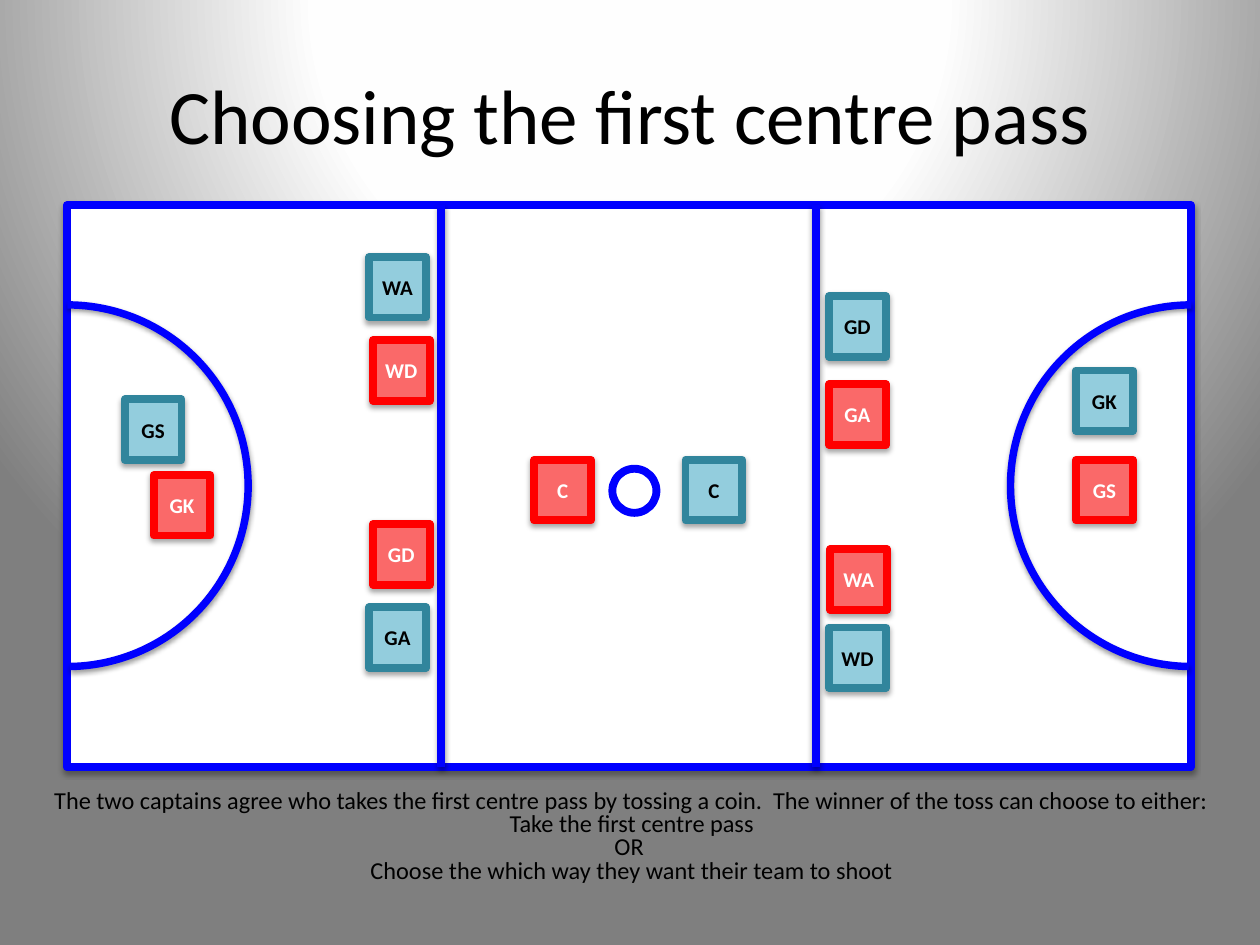
import pptx
import pptx.dml.color
import pptx.enum.shapes
import pptx.enum.text
import pptx.oxml
import pptx.oxml.ns
import pptx.util

SHAPE = pptx.enum.shapes.MSO_SHAPE
COLOURS = {
    "text": "000000", "court": "FFFFFF", "line": "0000FF",
    "centre": "FEFEFE", "edge": "7F7F7F",
    "blue": "93CDDD", "blue border": "31859C", "blue text": "000000",
    "red": "FA6969", "red border": "FF0000", "red text": "FFFFFF",
}
COLUMNS, ROWS = 100, 75
COURT_LEFT, COURT_TOP, COURT_WIDTH, COURT_HEIGHT = 5.3, 16.3, 89.2, 44.6
PLAYERS = [
    ("GA", "blue", 29.3, 48.2), ("GS", "blue", 9.9, 31.7),
    ("C", "blue", 54.4, 36.5), ("GD", "blue", 65.8, 23.5),
    ("GK", "blue", 85.4, 29.4), ("GD", "red", 29.6, 41.6),
    ("GK", "red", 12.2, 37.7), ("C", "red", 42.4, 36.5),
    ("GA", "red", 65.8, 30.5), ("GS", "red", 85.4, 36.5),
    ("WA", "blue", 29.3, 20.4), ("WD", "blue", 65.8, 49.8),
    ("WA", "red", 65.9, 43.6), ("WD", "red", 29.6, 27),
]
RULES = [
    "The two captains agree who takes the first centre pass by tossing a coin.  "
    "The winner of the toss can choose to either:",
    "Take the first centre pass",
    "OR ",
    "Choose the which way they want their team to shoot",
]


class CourtSlide:
    """Draws netball court elements on one slide, measured in grid columns and rows."""

    font = "Calibri"

    def __init__(self, presentation):
        self.column = presentation.slide_width / COLUMNS
        self.row = presentation.slide_height / ROWS
        self.slide = presentation.slides.add_slide(presentation.slide_layouts[6])
        self.court = self.slide.shapes.add_group_shape()

    def colour(self, name):
        return pptx.dml.color.RGBColor.from_string(COLOURS[name])

    def place(self, left, top, width, height):
        return (round(left * self.column), round(top * self.row),
                round(width * self.column), round(height * self.row))

    def background(self, stops):
        self.slide.background.fill.solid()
        properties = self.slide.background.fill._xPr
        stop_xml = "".join(
            f'<a:gs pos="{share * 1000}"><a:srgbClr val="{COLOURS[name]}"/></a:gs>'
            for share, name in stops)
        gradient = pptx.oxml.parse_xml(
            f'<a:gradFill {pptx.oxml.ns.nsdecls("a")} rotWithShape="1">'
            f'<a:gsLst>{stop_xml}</a:gsLst><a:path path="circle">'
            '<a:fillToRect l="50000" t="-80000" r="50000" b="180000"/>'
            '</a:path></a:gradFill>')
        properties.replace(properties[0], gradient)

    def shadow(self, shape, opacity=38, distance=1.6):
        shape._element.spPr.append(pptx.oxml.parse_xml(
            f'<a:effectLst {pptx.oxml.ns.nsdecls("a")}>'
            f'<a:outerShdw blurRad="{pptx.util.Pt(3.1)}" dist="{pptx.util.Pt(distance)}" '
            'dir="5400000" rotWithShape="0"><a:srgbClr val="000000">'
            f'<a:alpha val="{opacity * 1000}"/></a:srgbClr></a:outerShdw></a:effectLst>'))

    def outline(self, shape, name="line", width=4.5):
        shape.line.color.rgb = self.colour(name)
        shape.line.width = pptx.util.Pt(width)

    def block(self, shapes, kind, area, fill, border):
        shape = shapes.add_shape(kind, *self.place(*area))
        shape.fill.solid()
        shape.fill.fore_color.rgb = self.colour(fill)
        self.outline(shape, border)
        return shape

    def boundary(self, *area):
        shape = self.block(self.court.shapes, SHAPE.RECTANGLE, area, "court", "line")
        self.shadow(shape, 35, 1.8)

    def centre_circle(self, *area):
        shape = self.block(self.court.shapes, SHAPE.OVAL, area, "court", "line")
        shape.shadow.inherit = False

    def third_line(self, column, top, height):
        left, top, _, height = self.place(column, top, 0, height)
        line = self.court.shapes.add_connector(
            pptx.enum.shapes.MSO_CONNECTOR.STRAIGHT, left, top, left, top + height)
        self.outline(line)
        self.shadow(line)

    def goal_arc(self, left, top, size, flipped):
        arc = self.court.shapes.add_shape(SHAPE.ARC, *self.place(left, top, size, size))
        arc.adjustments[0], arc.adjustments[1] = 162, 53.51
        arc.fill.background()
        self.outline(arc, width=4.25)
        self.shadow(arc)
        if flipped:
            arc._element.spPr.xfrm.set("flipH", "1")

    def fill_text(self, frame, lines, size, colour, bold=False, spacing=None):
        frame.word_wrap = True
        frame.vertical_anchor = pptx.enum.text.MSO_ANCHOR.MIDDLE
        for index, line in enumerate(lines):
            paragraph = frame.add_paragraph() if index else frame.paragraphs[0]
            paragraph.text = line
            paragraph.alignment = pptx.enum.text.PP_ALIGN.CENTER
            paragraph.line_spacing = spacing
            paragraph.font.name = self.font
            paragraph.font.size = pptx.util.Pt(size)
            paragraph.font.bold = bold
            paragraph.font.color.rgb = self.colour(colour)

    def player(self, position, team, left, top):
        shape = self.block(self.slide.shapes, SHAPE.FLOWCHART_PROCESS,
                           (left, top, 4.5, 4.8), team, f"{team} border")
        self.shadow(shape, 35, 1.8)
        shape.text_frame.margin_left = shape.text_frame.margin_right = 0
        self.fill_text(shape.text_frame, [position], 12, f"{team} text", bold=True)

    def text(self, area, lines, size, spacing=None):
        box = self.slide.shapes.add_textbox(*self.place(*area))
        self.fill_text(box.text_frame, lines, size, "text", spacing=spacing)


def main():
    presentation = pptx.Presentation()
    presentation.slide_width = pptx.util.Inches(10)
    presentation.slide_height = pptx.util.Inches(7.5)
    slide = CourtSlide(presentation)
    slide.background([(0, "court"), (40, "centre"), (100, "edge")])
    slide.boundary(COURT_LEFT, COURT_TOP, COURT_WIDTH, COURT_HEIGHT)
    for third in (1, 2):
        slide.third_line(COURT_LEFT + COURT_WIDTH * third / 3, COURT_TOP, COURT_HEIGHT)
    slide.centre_circle(48.6, 37.2, 3.5, 3.5)
    for left, flipped in ((-9, False), (80.2, True)):
        slide.goal_arc(left, 24.2, 28.7, flipped)
    for player in PLAYERS:
        slide.player(*player)
    slide.text((5, 4.7, 90, 8.7), ["Choosing the first centre pass"], 44)
    slide.text((1, 61.3, 98.3, 10.3), RULES, 13.9, spacing=0.8)
    presentation.save("out.pptx")


if __name__ == "__main__":
    main()
